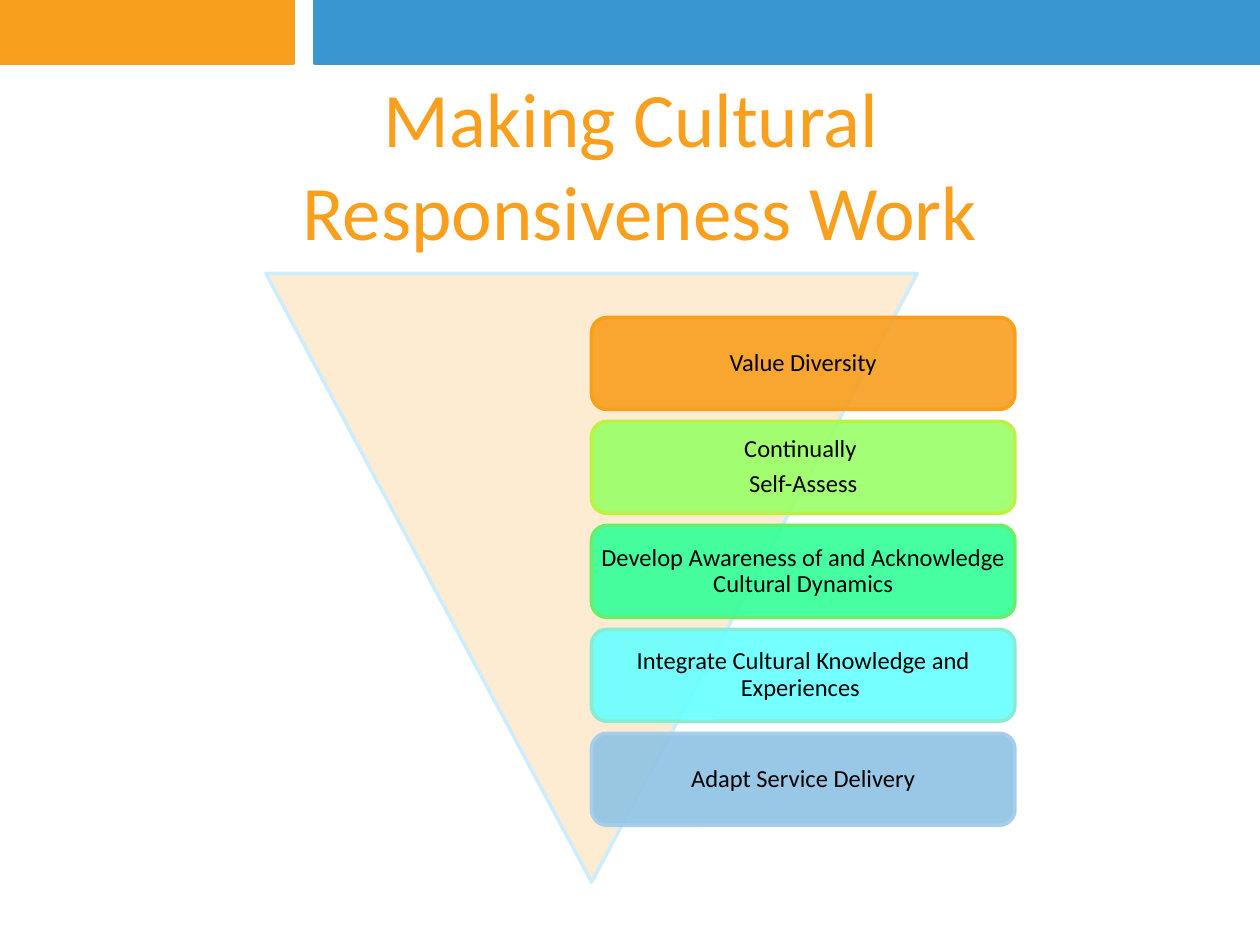
from pptx import Presentation
from pptx.dml.color import RGBColor
from pptx.enum.shapes import MSO_SHAPE
from pptx.enum.text import MSO_ANCHOR, MSO_AUTO_SIZE, PP_ALIGN
from pptx.oxml.ns import qn
from pptx.util import Inches, Pt
from lxml import etree

RECT = MSO_SHAPE.RECTANGLE
ROUNDED = MSO_SHAPE.ROUNDED_RECTANGLE
TRIANGLE = MSO_SHAPE.ISOSCELES_TRIANGLE
CENTER = PP_ALIGN.CENTER
MIDDLE = MSO_ANCHOR.MIDDLE
NO_FIT = MSO_AUTO_SIZE.NONE
TITLE_ONLY = 5

FONT = "Calibri"
COLORS = {
    "orange": "F89F1E", "blue": "3A96D0", "black": "000000",
    "cream": "FEECD2", "ice": "CCECFF",
}
# Paragraphs, fill and outline of each step
STEPS = [
    (["Value Diversity"], "F89F1E", "F89F1E"),
    (["Continually ", "Self-Assess"], "99FF66", "BCF244"),
    (["Develop Awareness of and Acknowledge Cultural Dynamics"], "31FF97", "67EE6A"),
    (["Integrate Cultural Knowledge and Experiences "], "66FFFF", "88ECD2"),
    (["Adapt Service Delivery"], "8FC3E4", "A7CDED"),
]


def add_block(page, kind, left, top, width, height, fill, line, opacity=100):
    """Add a filled, outlined shape; lengths are in inches."""
    block = page.shapes.add_shape(
        kind, Inches(left), Inches(top), Inches(width), Inches(height))
    block.shadow.inherit = False
    block.fill.solid()
    block.fill.fore_color.rgb = RGBColor.from_string(fill)
    block.line.color.rgb = RGBColor.from_string(line)
    block.line.width = Pt(2)
    if opacity < 100:
        color = block.fill._xPr.find(qn("a:solidFill"))[0]
        etree.SubElement(color, qn("a:alpha")).set("val", str(opacity * 1000))
    return block


def style_para(para, size, color):
    para.alignment = CENTER
    para.font.name = FONT
    para.font.size = Pt(size)
    para.font.color.rgb = RGBColor.from_string(color)


def add_header(page, left, top, width, height):
    """Orange and blue bars with a gap between them."""
    orange_width, gap = 2.33, 0.17
    blue_left = orange_width + gap
    add_block(page, RECT, left, top, orange_width, height,
              COLORS["orange"], COLORS["orange"])
    add_block(page, RECT, left + blue_left, top, width - blue_left, height,
              COLORS["blue"], COLORS["blue"])


def add_title(page, left, top, width, height):
    title = page.shapes.title
    title.left, title.top = Inches(left), Inches(top)
    title.width, title.height = Inches(width), Inches(height)
    frame = title.text_frame
    frame.text = "Making Cultural \vResponsiveness Work"
    frame.auto_size = NO_FIT
    frame.word_wrap = True
    frame.vertical_anchor = MIDDLE
    frame.margin_bottom = Inches(0.79)  # lifts the lines above the triangle
    style_para(frame.paragraphs[0], 44, COLORS["orange"])


def add_step(page, left, top, width, height, lines, fill, line):
    step = add_block(page, ROUNDED, left, top, width, height, fill, line, 90)
    frame = step.text_frame
    frame.word_wrap = True
    frame.vertical_anchor = MIDDLE
    frame.margin_left = frame.margin_right = Inches(0.02)
    frame.margin_top = frame.margin_bottom = Inches(0.02)
    frame.text = "\n".join(lines)
    for para in frame.paragraphs:
        para.line_spacing = 0.9
        style_para(para, 14, COLORS["black"])
    for para in frame.paragraphs[:-1]:
        para.space_after = Pt(5)


def add_funnel(page, left, top, width, height):
    """Inverted triangle with the steps stacked from its centre line."""
    triangle = add_block(page, TRIANGLE, left, top, width, height,
                         COLORS["cream"], COLORS["ice"])
    triangle.rotation = 180
    step_width = width * 0.65
    pitch = 0.825
    for index, (lines, fill, line) in enumerate(STEPS):
        add_step(page, left + width / 2, top + 0.35 + index * pitch,
                 step_width, 0.73, lines, fill, line)


def main():
    deck = Presentation()
    deck.slide_width, deck.slide_height = Inches(10), Inches(7.5)
    page = deck.slides.add_slide(deck.slide_layouts[TITLE_ONLY])
    add_header(page, 0, 0, 10, 0.5)
    add_title(page, 0.33, 1, 9.5, 1.33)
    add_funnel(page, 2.11, 2.17, 5.17, 4.83)
    deck.save("out.pptx")


if __name__ == "__main__":
    main()
